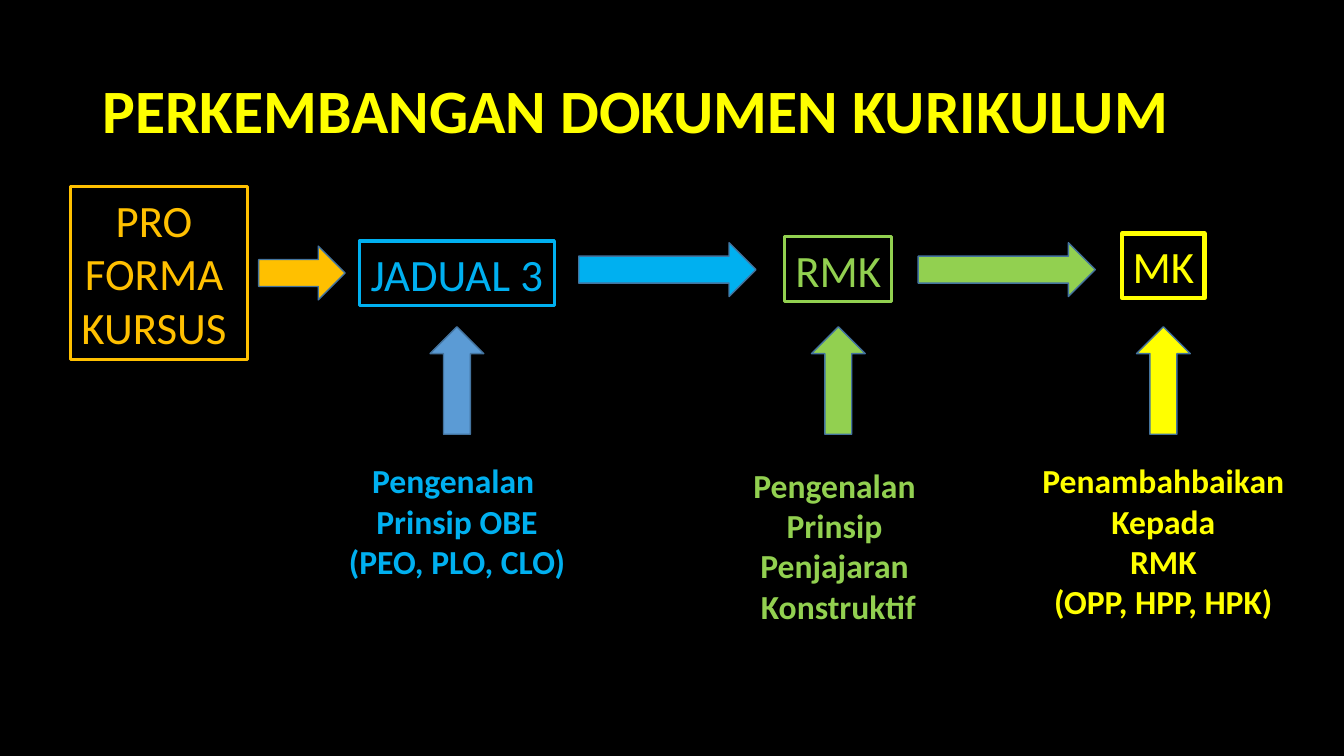
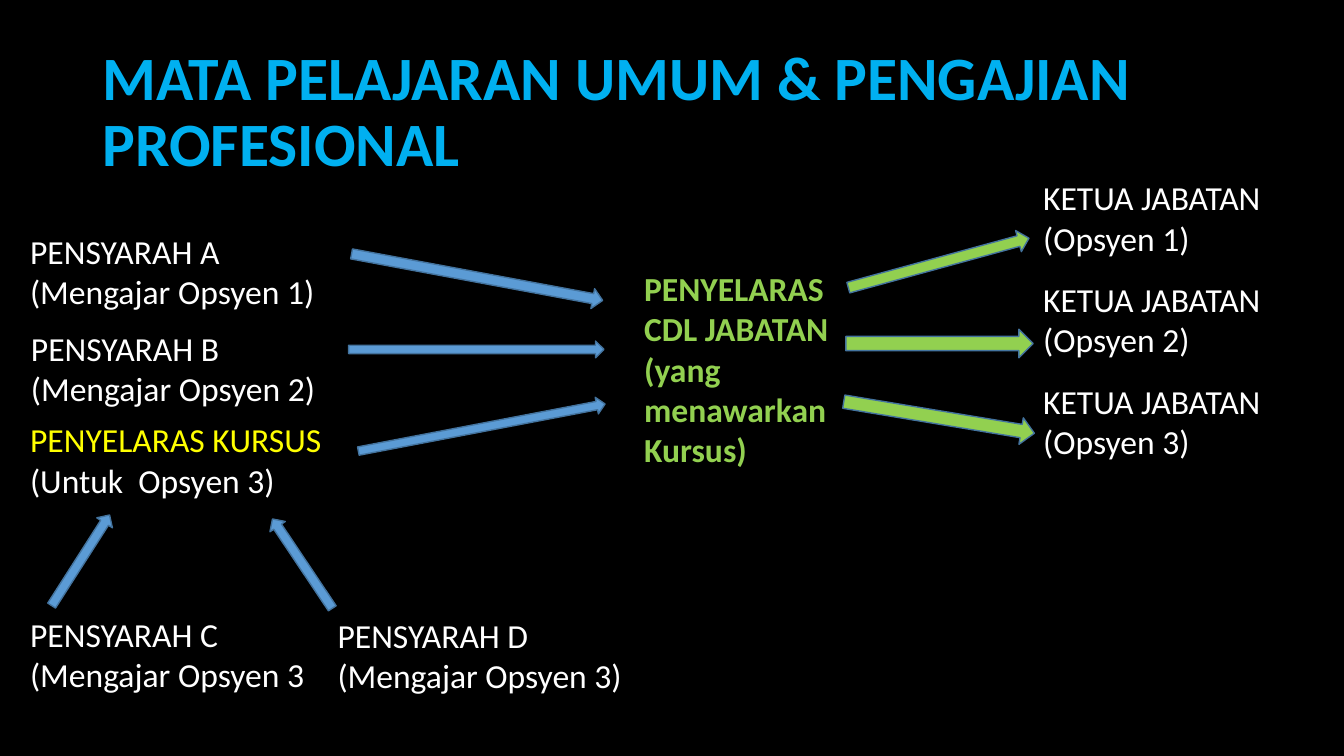
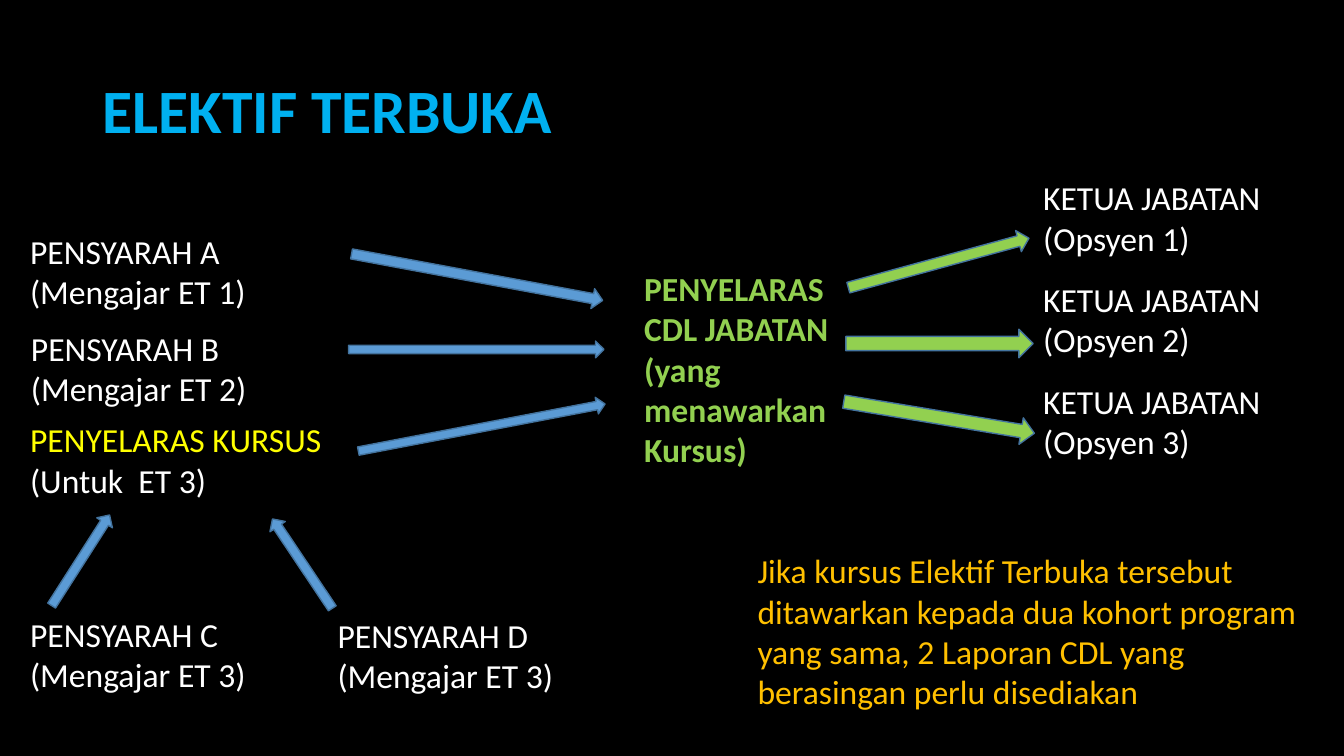
from pptx import Presentation
from pptx.dml.color import RGBColor as RGB
from pptx.enum.shapes import MSO_SHAPE as Shape
from pptx.enum.text import MSO_ANCHOR as Anchor, PP_ALIGN as Align
from pptx.util import Inches, Pt

BLACK = RGB(0x00, 0x00, 0x00)
WHITE = RGB(0xFF, 0xFF, 0xFF)
YELLOW = RGB(0xFF, 0xFF, 0x00)
AMBER = RGB(0xFF, 0xC0, 0x00)
GREEN = RGB(0x92, 0xD0, 0x50)
CYAN = RGB(0x00, 0xB0, 0xF0)
BLUE = RGB(0x5B, 0x9B, 0xD5)
NAVY = RGB(0x43, 0x73, 0x9E)

FONT = "Calibri"
COLS, ROWS = 160, 90  # square cells
CELL = Inches(7.5) / ROWS


def grid(*cells):
    """Turn counts of grid cells into slide lengths."""
    return [round(n * CELL) for n in cells]


def write(frame, lines, size, align=Align.LEFT, bold=False):
    """Fill a frame with one paragraph for each (text, colour) pair."""
    frame.word_wrap = align == Align.LEFT
    for i, (text, tint) in enumerate(lines):
        para = frame.add_paragraph() if i else frame.paragraphs[0]
        para.alignment = align
        run = para.add_run()
        run.text = text
        font = run.font
        font.name, font.size, font.bold = FONT, Pt(size), bold
        font.color.rgb = tint


def tinted(tint, *texts):
    return [(text, tint) for text in texts]


def add_page(deck, text, tint):
    slide = deck.slides.add_slide(deck.slide_layouts[5])
    title = slide.shapes.title
    title.left, title.top, title.width, title.height = grid(11, 4.8, 138, 17.4)
    frame = title.text_frame
    frame.vertical_anchor = Anchor.MIDDLE
    write(frame, tinted(tint, text), 44, bold=True)
    frame.paragraphs[0].line_spacing = 0.9
    return slide


def add_text(slide, place, lines, **style):
    box = slide.shapes.add_textbox(*grid(*place))
    write(box.text_frame, lines, 24, **style)


def add_arrow(slide, place, tint, turn=0, kind=Shape.RIGHT_ARROW):
    arrow = slide.shapes.add_shape(kind, *grid(*place))
    arrow.shadow.inherit = False
    arrow.rotation = turn
    arrow.fill.solid()
    arrow.fill.fore_color.rgb = tint
    arrow.line.color.rgb = NAVY
    arrow.line.width = Pt(1)


def add_frame(slide, place, tint, texts, weight=2.25):
    box = slide.shapes.add_shape(Shape.RECTANGLE, *grid(*place))
    box.shadow.inherit = False
    box.fill.background()
    box.line.color.rgb = tint
    box.line.width = Pt(weight)
    write(box.text_frame, tinted(tint, *texts), 32, Align.CENTER)


def add_stage(slide, mid, box, weight, name, tint, shaft, top, notes):
    """Stack a framed name, an up arrow and its notes on one centre line."""
    y, wide = box
    add_frame(slide, (mid - wide / 2, y, wide, 7.7), tint, [name], weight)
    add_arrow(slide, (mid - 3.2, 38.9, 6.4, 12.8), shaft, kind=Shape.UP_ARROW)
    add_text(slide, (mid - 16, top, 32, 5 * len(notes)), tinted(tint, *notes),
             align=Align.CENTER, bold=True)


def add_growth(deck):
    slide = add_page(deck, "PERKEMBANGAN DOKUMEN KURIKULUM", YELLOW)
    add_frame(slide, (8.4, 22.2, 21.1, 20.6), AMBER,
              ["PRO ", "FORMA ", "KURSUS "])
    stages = [
        (54.4, (28.7, 23.2), 2.25, "JADUAL 3", CYAN, BLUE, 54.2,
         ["Pengenalan ", "Prinsip OBE", "(PEO, PLO, CLO)"]),
        (99.8, (28.2, 12.7), 2.25, "RMK", GREEN, GREEN, 54.7,
         ["Pengenalan ", "Prinsip ", "Penjajaran ", "Konstruktif"]),
        (138.5, (27.8, 9.8), 3, "MK", YELLOW, YELLOW, 54.2,
         ["Penambahbaikan ", "Kepada", "RMK", "(OPP, HPP, HPK)"]),
    ]
    for stage in stages:
        add_stage(slide, *stage)
    for x, y, wide, tint in [(30.8, 29.3, 10.3, AMBER),
                             (68.9, 28.9, 21.1, CYAN),
                             (109.3, 28.9, 21.1, GREEN)]:
        add_arrow(slide, (x, y, wide, 6.4), tint)


def add_flow(deck, title, course, last=")"):
    """Draw the report flow; last closes the line of lecturer C."""
    slide = add_page(deck, title, CYAN)
    staff = [("A", 2.4, 26.9, 1, ")"), ("B", 2.5, 38.4, 2, ")"),
             ("C", 2.4, 72.5, 3, last), ("D", 39, 72.6, 3, ")")]
    for name, x, y, num, end in staff:
        add_text(slide, (x, y, 36.6, 10.9), tinted(
            WHITE, f"PENSYARAH {name}", f"(Mengajar {course} {num}{end}"))
    add_text(slide, (2.4, 49.3, 37.6, 10.9),
             [("PENYELARAS KURSUS", YELLOW), (f"(Untuk  {course} 3)", WHITE)])
    add_text(slide, (75.5, 31.3, 25.2, 25.4), tinted(
        GREEN, "PENYELARAS", "CDL JABATAN", "(yang", "menawarkan", "Kursus)"),
        bold=True)
    for i in range(3):
        add_text(slide, (123, 20.5 + 12.1 * i, 29.4, 10.9), tinted(
            WHITE, "KETUA JABATAN", f"(Opsyen {i + 1})"))
    arrows = {
        BLUE: [((41.6, 31.8, 30.4, 2.4), 10.5),
               ((41.5, 40.6, 30.4, 2), 0),
               ((42.4, 49.9, 29.9, 2), 349.2),
               ((3.2, 65.6, 12.8, 2.2), 302.6),
               ((29.6, 66, 12.8, 2.2), 236.2)],
        GREEN: [((100.6, 30, 22.3, 2.6), 344.7),
                ((100.7, 39.2, 22.3, 3.4), 0),
                ((100.3, 48.1, 23, 3.2), 9.4)],
    }
    for tint, group in arrows.items():
        for place, turn in group:
            add_arrow(slide, place, tint, turn)
    return slide


def main():
    deck = Presentation()
    deck.slide_width, deck.slide_height = grid(COLS, ROWS)
    back = deck.slide_master.background.fill
    back.solid()
    back.fore_color.rgb = BLACK

    add_growth(deck)
    add_flow(deck, "MATA PELAJARAN UMUM & PENGAJIAN PROFESIONAL", "Opsyen", "")
    slide = add_flow(deck, "ELEKTIF TERBUKA", "ET")
    add_text(slide, (89, 64.9, 68, 20.6), tinted(
        AMBER, "Jika kursus Elektif Terbuka tersebut",
        "ditawarkan kepada dua kohort program",
        "yang sama, 2 Laporan CDL yang", "berasingan perlu disediakan"))
    deck.save("out.pptx")


if __name__ == "__main__":
    main()
